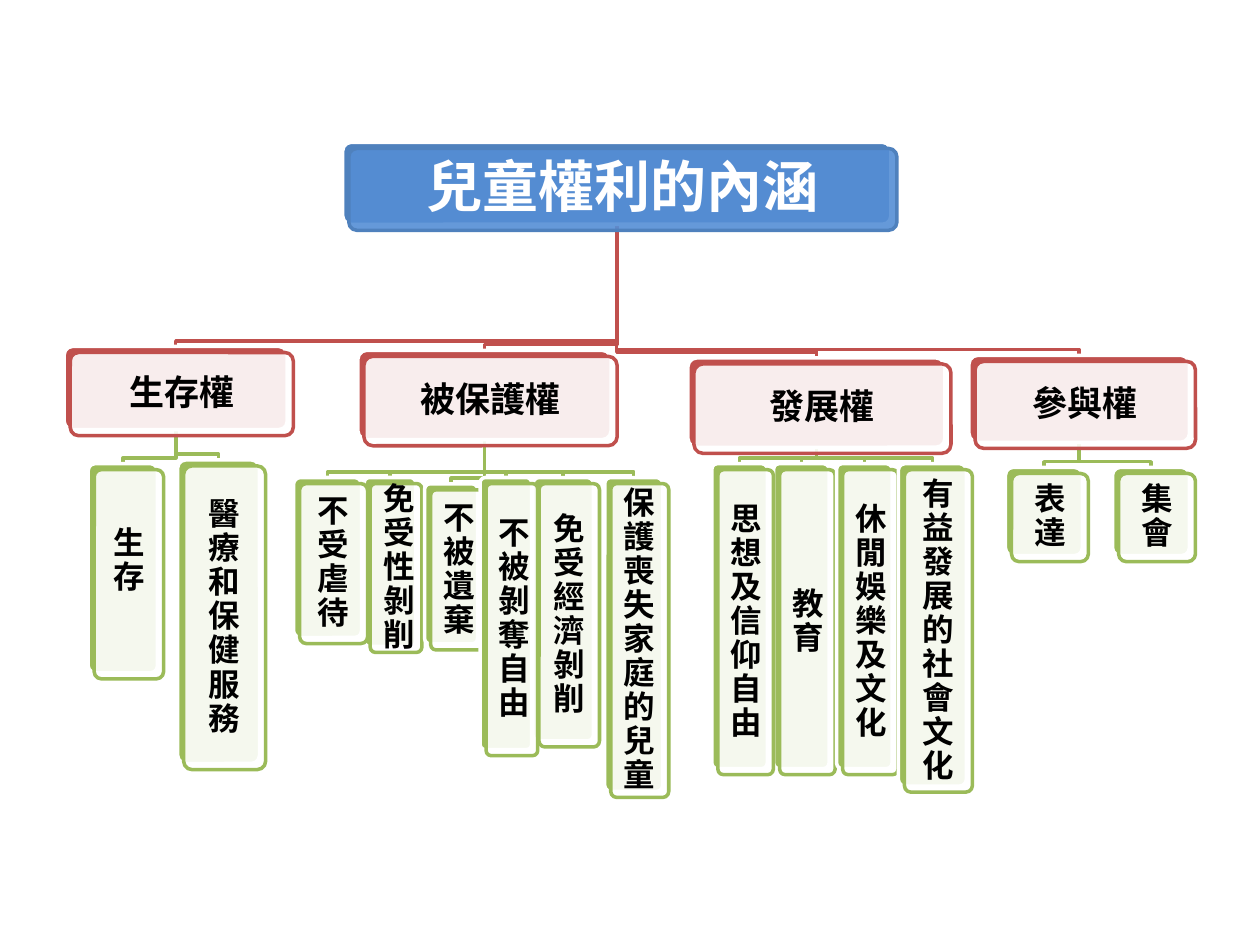
from dataclasses import dataclass
from lxml import etree
from pptx import Presentation
from pptx.dml.color import RGBColor
from pptx.enum.shapes import MSO_SHAPE
from pptx.enum.text import MSO_ANCHOR, PP_ALIGN
from pptx.oxml.ns import qn
from pptx.util import Inches, Pt

ROUNDED = MSO_SHAPE.ROUNDED_RECTANGLE
MIDDLE = MSO_ANCHOR.MIDDLE
CENTER = PP_ALIGN.CENTER
COLUMNS, ROWS = 100, 75
CARD_OFFSET = 0.48
ELBOW_RISE = 0.45


def color(value):
    return RGBColor.from_string(value)


@dataclass
class Level:
    back: str
    front: str
    text: str
    size: int
    inset: float


@dataclass
class Node:
    text: str
    left: float
    top: float
    width: float
    height: float
    children: tuple = ()
    raise_by: float = 0

    @property
    def center(self):
        return self.left + self.width / 2

    @property
    def bottom(self):
        return self.top + self.height


LEVELS = (
    Level("4F81BD", "558ED5", "FFFFFF", 32, 1.5),
    Level("C0504D", "FFFFFF", "000000", 20, 1.0),
    Level("9BBB59", "FFFFFF", "000000", 18, 0.9),
)

SURVIVAL = (
    Node("生存", 7, 36.8, 5.5, 16.6, raise_by=2),
    Node("醫療和保健服務", 14.1, 36.5, 6.5, 24.1),
)
PROTECTION = (
    Node("免受經濟剝削", 42.3, 37.9, 4.8, 20.9),
    Node("免受性剝削", 28.9, 37.9, 4.1, 13.4),
    Node("不受虐待", 23.3, 37.9, 5.4, 12.7),
    Node("不被遺棄", 33.7, 38.4, 4.2, 12.7),
    Node("不被剝奪自由", 38.1, 37.9, 4.1, 21.6),
    Node("保護喪失家庭的兒童", 48, 37.9, 4.6, 24.9),
)
DEVELOPMENT = (
    Node("教育", 61.4, 36.8, 4.4, 24.2),
    Node("休閒娛樂及文化", 66.4, 36.8, 4.4, 24.2),
    Node("思想及信仰自由", 56.5, 36.8, 4.4, 24.2),
    Node("有益發展的社會文化", 71.3, 36.8, 5.4, 25.6),
)
PARTICIPATION = (
    Node("表達", 79.8, 37.1, 6.1, 7),
    Node("集會", 88.3, 37.1, 6.1, 7),
)
RIGHTS = Node("兒童權利的內涵", 27.2, 11.3, 43.5, 6.5, (
    Node("生存權", 5.1, 27.5, 17.7, 6.6, SURVIVAL),
    Node("被保護權", 28.4, 27.8, 20.1, 7.1, PROTECTION),
    Node("發展權", 54.6, 28.4, 20.4, 7.1, DEVELOPMENT),
    Node("參與權", 76.9, 28.2, 17.5, 6.9, PARTICIPATION),
))


class Chart:
    font = "Noto Sans CJK SC"
    line_width = Pt(2)

    def __init__(self, presentation):
        self.column = presentation.slide_width / COLUMNS
        self.row = presentation.slide_height / ROWS
        self.slide = presentation.slides.add_slide(presentation.slide_layouts[6])

    def point(self, column, row):
        return round(column * self.column), round(row * self.row)

    def outline(self, shape, line):
        shape.shadow.inherit = False
        shape.line.color.rgb = color(line)
        shape.line.width = self.line_width

    def branch(self, parent, child, level):
        elbow = child.top - ELBOW_RISE
        builder = self.slide.shapes.build_freeform(*self.point(parent.center, parent.bottom))
        builder.add_line_segments([
            self.point(parent.center, elbow),
            self.point(child.center, elbow),
            self.point(child.center, child.top),
        ], close=False)
        shape = builder.convert_to_shape()
        shape.fill.background()
        self.outline(shape, level.back)

    def panel(self, node, offset, fill, line):
        shape = self.slide.shapes.add_shape(
            ROUNDED,
            *self.point(node.left + offset, node.top + offset),
            *self.point(node.width, node.height))
        shape.adjustments[0] = 0.1
        shape.fill.solid()
        shape.fill.fore_color.rgb = color(fill)
        self.outline(shape, line)
        return shape

    def card(self, node, level):
        self.panel(node, 0, level.back, "FFFFFF")
        front = self.panel(node, CARD_OFFSET, level.front, level.back)
        fill_color = front._element.spPr.find(qn("a:solidFill")).find(qn("a:srgbClr"))
        etree.SubElement(fill_color, qn("a:alpha"), val="90000")
        self.label(front, node, level)

    def label(self, shape, node, level):
        frame = shape.text_frame
        frame.word_wrap = True
        frame.vertical_anchor = MIDDLE
        inset = round(level.inset * self.column)
        frame.margin_left = frame.margin_right = frame.margin_top = inset
        frame.margin_bottom = round((level.inset + node.raise_by) * self.row)
        paragraph = frame.paragraphs[0]
        paragraph.alignment = CENTER
        paragraph.line_spacing = 0.9
        run = paragraph.add_run()
        run.text = node.text
        run.font.size = Pt(level.size)
        run.font.bold = True
        run.font.color.rgb = color(level.text)
        run.font.name = self.font
        etree.SubElement(run.font._element, qn("a:ea"), typeface=self.font)

    def branches(self, parent, depth=1):
        for child in reversed(parent.children):
            self.branches(child, depth + 1)
            self.branch(parent, child, LEVELS[depth])

    def cards(self, node, depth=0):
        self.card(node, LEVELS[depth])
        for child in node.children:
            self.cards(child, depth + 1)


def main():
    presentation = Presentation()
    presentation.slide_width = Inches(10)
    presentation.slide_height = Inches(7.5)
    chart = Chart(presentation)
    chart.branches(RIGHTS)
    chart.cards(RIGHTS)
    presentation.save("out.pptx")


if __name__ == "__main__":
    main()
